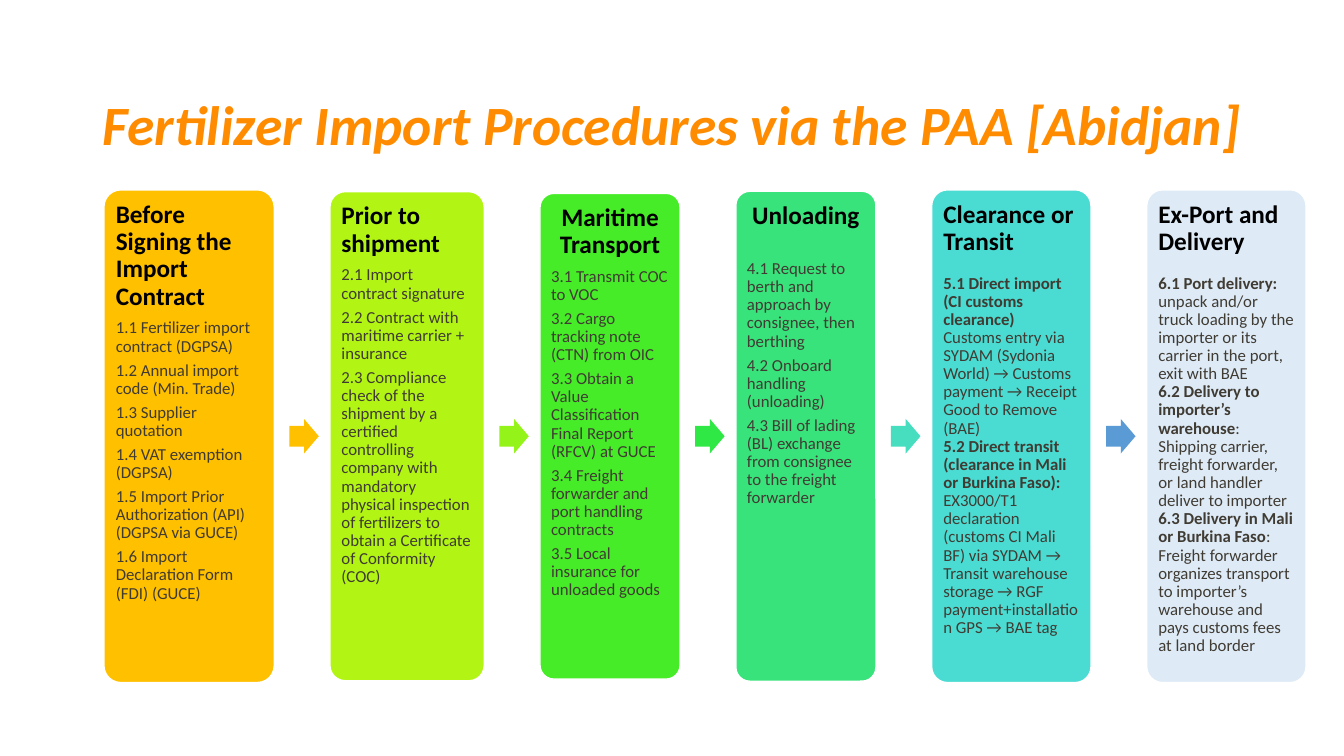
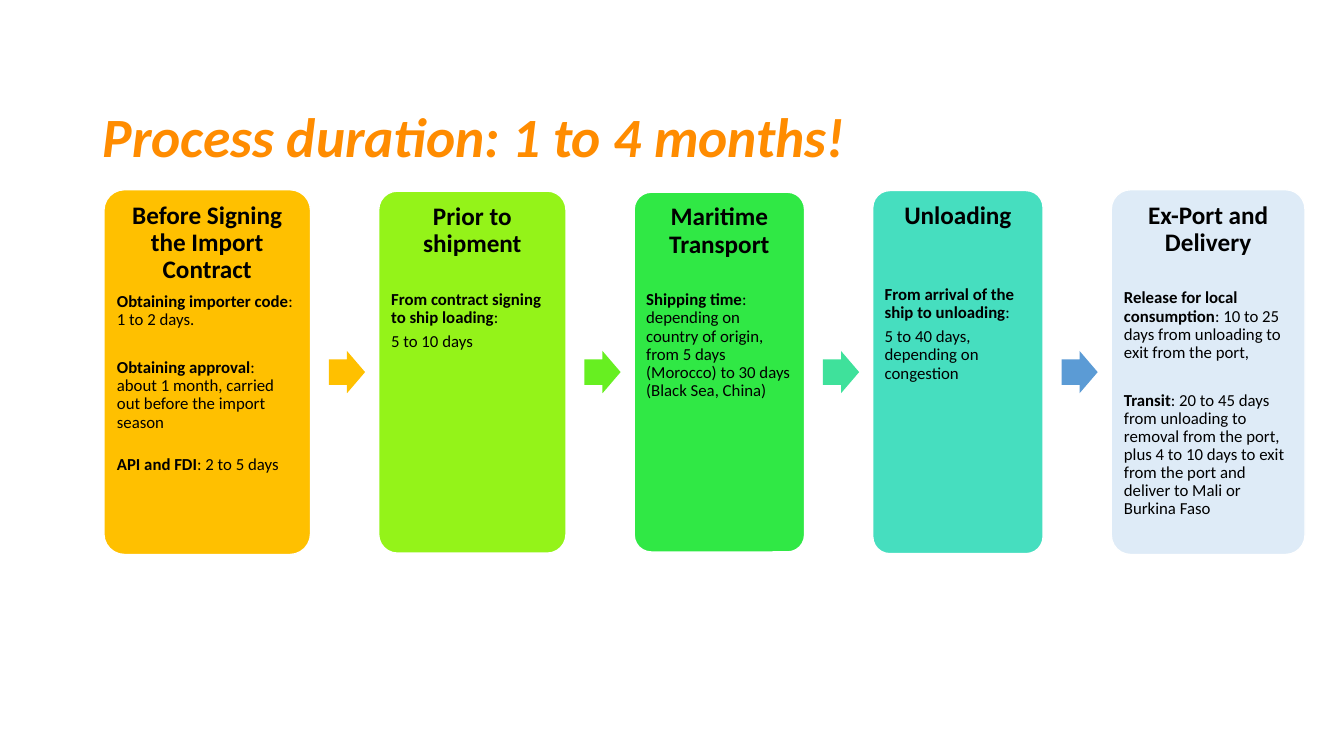
from dataclasses import dataclass

from pptx import Presentation
from pptx.dml.color import RGBColor
from pptx.enum.shapes import MSO_SHAPE
from pptx.enum.text import MSO_ANCHOR, MSO_AUTO_SIZE, PP_ALIGN
from pptx.util import Pt

ROUNDED, ARROW = MSO_SHAPE.ROUNDED_RECTANGLE, MSO_SHAPE.RIGHT_ARROW
TOP, MIDDLE = MSO_ANCHOR.TOP, MSO_ANCHOR.MIDDLE
LEFT, CENTER = PP_ALIGN.LEFT, PP_ALIGN.CENTER
FIXED = MSO_AUTO_SIZE.NONE

FONT = "Calibri"
BLACK = RGBColor(0x00, 0x00, 0x00)
WHITE = RGBColor(0xFF, 0xFF, 0xFF)
ORANGE = RGBColor(0xFF, 0x8C, 0x00)
BROWN = RGBColor(0x40, 0x3B, 0x33)
AMBER = RGBColor(0xFF, 0xC0, 0x00)
YELLOW_LIME = RGBColor(0xB2, 0xF5, 0x14)
LIME = RGBColor(0x94, 0xF3, 0x19)
LEAF = RGBColor(0x67, 0xEF, 0x21)
GREEN = RGBColor(0x46, 0xEC, 0x27)
BRIGHT_GREEN = RGBColor(0x30, 0xE8, 0x45)
EMERALD = RGBColor(0x39, 0xE3, 0x7B)
MINT = RGBColor(0x3F, 0xE1, 0x9B)
TEAL = RGBColor(0x46, 0xDE, 0xBF)
TURQUOISE = RGBColor(0x4A, 0xDC, 0xD2)
BLUE = RGBColor(0x5B, 0x9B, 0xD5)
PALE_BLUE = RGBColor(0xDE, 0xEB, 0xF7)

FLOW_LEFT = 74.2
HEADING_SIZE, BODY_SIZE = 18, 12
SPACE_RATIO = 0.35
GAP = 17


@dataclass
class Stage:
    """One column of the flow; an item is plain text or (bold, plain, space before)."""

    width: float
    height: float
    fill: RGBColor
    heading: str
    items: list
    align: PP_ALIGN = CENTER
    lead: float = 0
    tight: bool = False


class FlowDeck:
    """Style and current slide of the import procedure deck."""

    def __init__(self):
        self.deck = Presentation()
        self.deck.slide_width, self.deck.slide_height = Pt(960), Pt(540)
        self.page = None

    def add_page(self, title, top):
        self.page = self.deck.slides.add_slide(self.deck.slide_layouts[5])
        box = self.page.shapes.title
        box.left, box.top, box.width, box.height = Pt(66.2), Pt(top), Pt(867), Pt(52)
        frame = box.text_frame
        frame.text = title
        frame.auto_size, frame.vertical_anchor = FIXED, MIDDLE
        para = frame.paragraphs[0]
        para.alignment, para.line_spacing = LEFT, 0.9
        span = para.runs[0]
        self.style(span, 39.6, ORANGE, True)
        span.font.italic = True

    def style(self, span, size, color, bold):
        font = span.font
        font.name, font.size, font.bold = FONT, Pt(size), bold
        font.color.rgb = color

    def shape(self, kind, left, middle, width, height, fill):
        shape = self.page.shapes.add_shape(
            kind, Pt(left), Pt(middle - height / 2), Pt(width), Pt(height))
        shape.shadow.inherit = False
        shape.fill.solid()
        shape.fill.fore_color.rgb = fill
        return shape

    def arrow(self, left, middle, gap, fill):
        arrow = self.shape(ARROW, left + gap * 0.27, middle, gap * 0.53, gap * 0.62, fill)
        arrow.adjustments[0], arrow.adjustments[1] = 0.6, 0.5
        arrow.line.fill.background()

    def paragraph(self, para, spans, size, color, align=LEFT, before=0, tight=False):
        para.alignment, para.line_spacing = align, 0.9
        para.space_before = Pt(before)
        para.space_after = Pt(0 if tight else size * SPACE_RATIO)
        for text, bold in spans:
            if text:
                span = para.add_run()
                span.text = text
                self.style(span, size, color, bold)

    def stage(self, left, middle, stage, color):
        box = self.shape(ROUNDED, left, middle, stage.width, stage.height, stage.fill)
        box.adjustments[0] = 0.1
        box.line.color.rgb, box.line.width = WHITE, Pt(1)
        frame = box.text_frame
        frame.word_wrap, frame.auto_size, frame.vertical_anchor = True, FIXED, TOP
        frame.margin_left = frame.margin_right = Pt(5)
        frame.margin_top = frame.margin_bottom = Pt(5)
        self.paragraph(frame.paragraphs[0], [(stage.heading, True)],
                       HEADING_SIZE, BLACK, stage.align)
        for index, item in enumerate(stage.items):
            bold, plain, before = ("", item, 0) if isinstance(item, str) else item
            self.paragraph(frame.add_paragraph(), [(bold, True), (plain, False)],
                           BODY_SIZE, color, LEFT,
                           before if index else stage.lead, stage.tight)

    def flow(self, stages, arrow_fills, middle, gap, color):
        left = FLOW_LEFT
        for index, stage in enumerate(stages):
            self.stage(left, middle, stage, color)
            left += stage.width
            if index < len(arrow_fills):
                self.arrow(left, middle, gap, arrow_fills[index])
            left += gap


PROCEDURES = [
    Stage(121.7, 352, AMBER, "Before Signing the Import Contract", [
        "1.1 Fertilizer import contract (DGPSA)",
        "1.2 Annual import code (Min. Trade)",
        "1.3 Supplier quotation",
        "1.4 VAT exemption (DGPSA)",
        "1.5 Import Prior Authorization (API) (DGPSA via GUCE)",
        "1.6 Import Declaration Form (FDI) (GUCE)",
    ], LEFT),
    Stage(110.2, 349.4, YELLOW_LIME, "Prior to shipment", [
        "2.1 Import contract signature",
        "2.2 Contract with maritime carrier + insurance",
        "2.3 Compliance check of the shipment by a certified controlling company "
        "with mandatory physical inspection of fertilizers to obtain a Certificate "
        "of Conformity (COC)",
    ], LEFT),
    Stage(100.1, 347, GREEN, "Maritime Transport", [
        "3.1 Transmit COC to VOC",
        "3.2 Cargo tracking note (CTN) from OIC",
        "3.3 Obtain a Value Classification Final Report (RFCV) at GUCE",
        "3.4 Freight forwarder and port handling contracts",
        "3.5 Local insurance for unloaded goods",
    ]),
    Stage(100.1, 350, EMERALD, "Unloading", [
        "4.1 Request to berth and approach by consignee, then berthing",
        "4.2 Onboard handling (unloading)",
        "4.3 Bill of lading (BL) exchange from consignee to the freight forwarder",
    ], lead=15.5),
    Stage(113.8, 352, TURQUOISE, "Clearance or Transit", [
        ("5.1 Direct import (CI customs clearance)", "", 0),
        "Customs entry via SYDAM (Sydonia World) → Customs payment → Receipt Good "
        "to Remove (BAE)",
        ("5.2 Direct transit (clearance in Mali or Burkina Faso): ",
         "EX3000/T1 declaration (customs CI Mali BF) via SYDAM → Transit warehouse "
         "storage → RGF payment+installation GPS → BAE tag", 0),
    ], LEFT, 7, True),
    Stage(113.8, 352, PALE_BLUE, "Ex-Port and Delivery", [
        ("6.1 Port delivery: ",
         "unpack and/or truck loading by the importer or its carrier in the port, "
         "exit with BAE", 0),
        ("6.2 Delivery to importer’s warehouse",
         ": Shipping carrier, freight forwarder, or land handler deliver to importer", 0),
        ("6.3 Delivery in Mali or Burkina Faso",
         ": Freight forwarder organizes transport to importer’s warehouse and pays "
         "customs fees at land border", 0),
    ], LEFT, 7, True),
]

DURATIONS = [
    Stage(147.6, 260.6, AMBER, "Before Signing the Import Contract", [
        ("Obtaining importer code", ": 1 to 2 days.", 0),
        ("Obtaining approval",
         ": about 1 month, carried out before the import season", GAP),
        ("API and FDI", ": 2 to 5 days", 13.5),
    ]),
    Stage(133.8, 258.6, LIME, "Prior to shipment", [
        ("From contract signing to ship loading", ":", 0),
        "5 to 10 days",
    ], lead=GAP),
    Stage(121.7, 257, BRIGHT_GREEN, "Maritime Transport", [
        ("Shipping time",
         ": depending on country of origin, from 5 days (Morocco) to 30 days "
         "(Black Sea, China)", 0),
    ], lead=GAP),
    Stage(121.7, 259.4, TEAL, "Unloading", [
        ("From arrival of the ship to unloading", ":", 0),
        "5 to 40 days, depending on congestion",
    ], lead=2 * GAP),
    Stage(138.4, 260.6, PALE_BLUE, "Ex-Port and Delivery", [
        ("Release for local consumption",
         ": 10 to 25 days from unloading to exit from the port,", 0),
        ("Transit",
         ": 20 to 45 days from unloading to removal from the port, plus 4 to 10 days "
         "to exit from the port and deliver to Mali or Burkina Faso", GAP),
    ], lead=GAP),
]


def main():
    flow_deck = FlowDeck()
    flow_deck.add_page("Fertilizer Import Procedures via the PAA [Abidjan]", 64.8)
    flow_deck.flow(PROCEDURES, [AMBER, LIME, BRIGHT_GREEN, TEAL, BLUE], 311.6, 39.8, BROWN)
    flow_deck.add_page("Process duration: 1 to 4 months!", 73.4)
    flow_deck.flow(DURATIONS, [AMBER, LEAF, MINT, BLUE], 265.8, 48.7, BLACK)
    flow_deck.deck.save("out.pptx")


if __name__ == "__main__":
    main()
